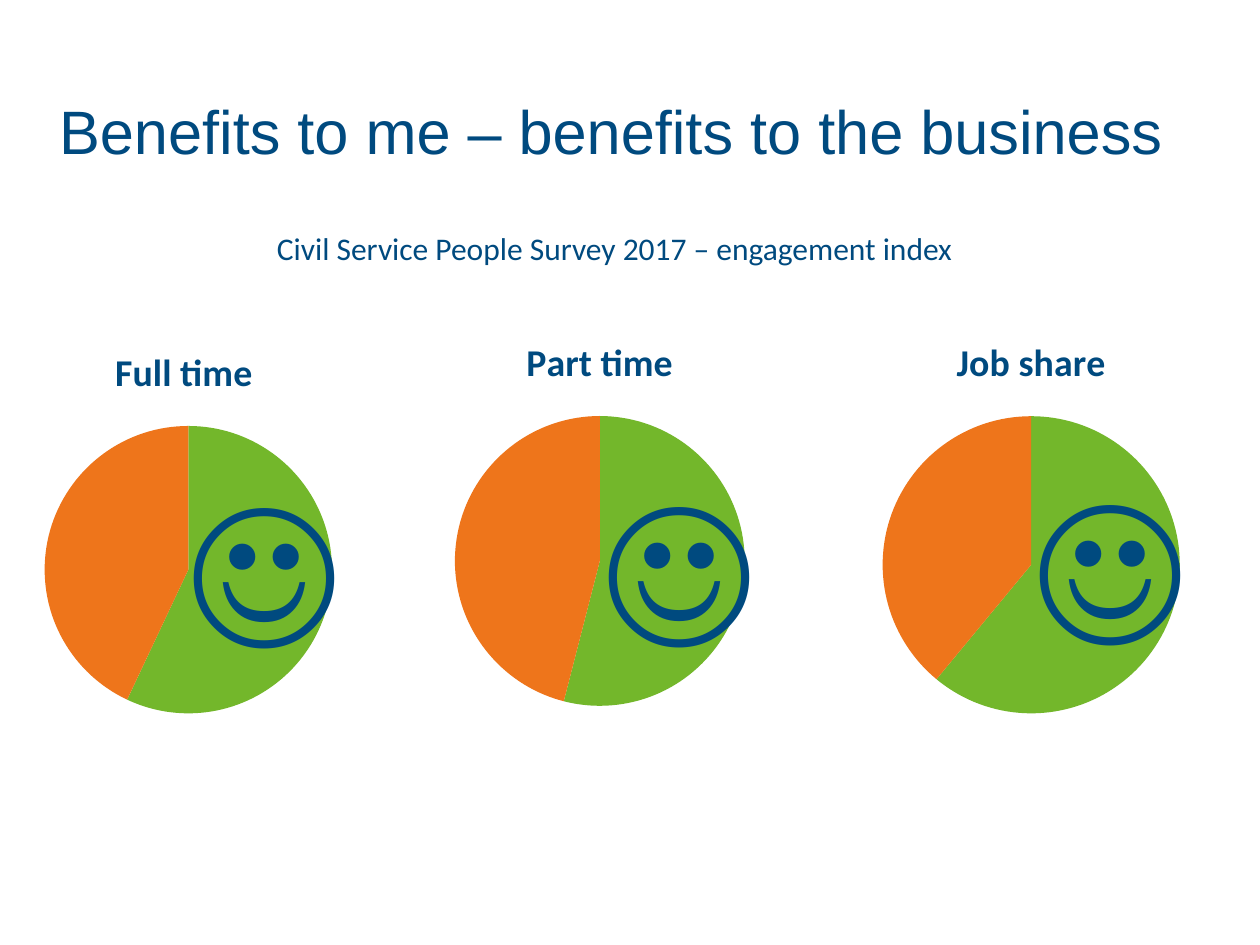
from dataclasses import dataclass

from pptx import Presentation
from pptx.chart.data import CategoryChartData
from pptx.dml.color import RGBColor
from pptx.enum.chart import XL_CHART_TYPE
from pptx.enum.text import MSO_ANCHOR, PP_ALIGN
from pptx.util import Pt


@dataclass(frozen=True)
class Theme:
    navy: RGBColor = RGBColor(0x00, 0x4A, 0x7F)
    grey: RGBColor = RGBColor(0x55, 0x56, 0x5A)
    green: RGBColor = RGBColor(0x73, 0xB7, 0x2B)
    orange: RGBColor = RGBColor(0xEE, 0x75, 0x1B)
    title_font: str = "Arial"
    body_font: str = "Calibri"
    title_size: float = 35
    body_size: float = 18
    chart_title_size: float = 21.6
    face_size: float = 96


theme = Theme()


def style(font, name, size):
    font.name = name
    font.size = Pt(size)
    font.color.rgb = theme.navy


def add_label(page, text, left, top, width, height, size):
    box = page.shapes.add_textbox(Pt(left), Pt(top), Pt(width), Pt(height))
    box.text_frame.word_wrap = True
    span = box.text_frame.paragraphs[0].add_run()
    span.text = text
    style(span.font, theme.body_font, size)


deck = Presentation()
deck.slide_width, deck.slide_height = Pt(720), Pt(540)
page = deck.slides.add_slide(deck.slide_layouts[5])

title = page.shapes.title
title.left, title.top, title.width, title.height = Pt(26.6), Pt(49), Pt(654.5), Pt(49.7)
title.text_frame.vertical_anchor = MSO_ANCHOR.BOTTOM
para = title.text_frame.paragraphs[0]
para.alignment = PP_ALIGN.LEFT
span = para.add_run()
span.text = "Benefits to me – benefits to the business"
style(span.font, theme.title_font, theme.title_size)

# Name, engaged share, then the chart's left, top, width and height
surveys = [
    ("Full time ", 57, 0, 185, 215.3, 232.6),
    ("Part time", 54, 218.2, 179.3, 249.1, 234),
    ("Job share", 61, 468, 179.3, 242.6, 238.3),
]
slice_colors = [theme.navy, theme.grey, theme.green, theme.orange]

for name, engaged, left, top, width, height in surveys:
    data = CategoryChartData()
    data.categories = ["1", "2", "3", "4"]
    data.add_series(name, [None, None, engaged, 100 - engaged])
    chart = page.shapes.add_chart(
        XL_CHART_TYPE.PIE, Pt(left), Pt(top), Pt(width), Pt(height), data
    ).chart
    style(chart.font, theme.body_font, theme.body_size)
    chart.has_legend = False
    chart.has_title = True
    span = chart.chart_title.text_frame.paragraphs[0].add_run()
    span.text = name
    style(span.font, theme.body_font, theme.chart_title_size)
    span.font.bold = True
    plot = chart.plots[0]
    plot.vary_by_categories = True
    for index, color in enumerate(slice_colors):
        fill = plot.series[0].points[index].format.fill
        fill.solid()
        fill.fore_color.rgb = color

for left, top in [(100.1, 258.5), (583.2, 257), (337, 257.8)]:
    add_label(page, "☺", left, top, 56.9, 123.8, theme.face_size)

add_label(page, "Civil Service People Survey 2017 – engagement index",
          151.2, 127.4, 410.4, 28.8, theme.body_size)

deck.save("out.pptx")
